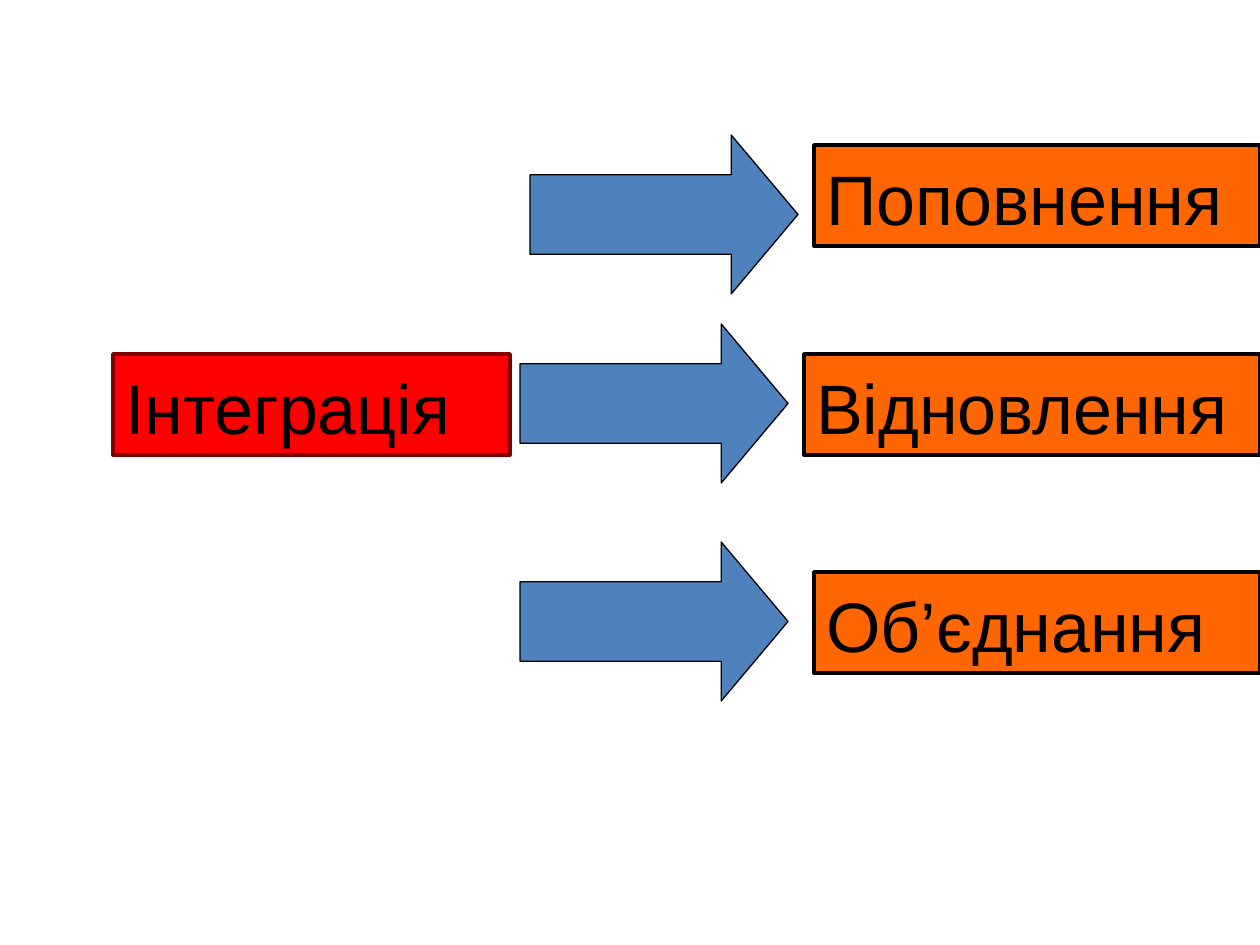
from pptx import Presentation
from pptx.dml.color import RGBColor
from pptx.enum.shapes import MSO_SHAPE as Shape
from pptx.enum.text import MSO_ANCHOR as Anchor, PP_ALIGN as Align
from pptx.util import Emu, Pt

# Content: the source term, then each outcome with (arrow left, arrow top, box left, box top)
SOURCE = ("Інтеграція", 113, 354, 397)
OUTCOMES = [
    ("Поповнення", 530, 135, 814, 145),
    ("Відновлення", 520, 324, 804, 354),
    ("Об’єднання", 520, 542, 814, 572),
]

THEME = {
    "source": "FF0000", "source_line": "800000",
    "outcome": "FF6600", "arrow": "4F81BD", "line": "000000",
    "text": "000000", "font": "Arial", "size": 40,
    "box_line": 2, "arrow_line": 0.75,
}
PAGE_WIDTH, PAGE_HEIGHT = 1260, 945
BOX_HEIGHT = 101
ARROW_WIDTH, ARROW_HEIGHT = 268, 159
ARROW_ADJUSTMENTS = (0.5, 0.42)


def px(length):
    return Emu(length * 914400 // 126)


def color(name):
    return RGBColor.from_string(THEME[name])


def add_figure(page, kind, bounds, fill, line, width):
    figure = page.shapes.add_shape(kind, *map(px, bounds))
    figure.shadow.inherit = False
    figure.fill.solid()
    figure.fill.fore_color.rgb = color(fill)
    figure.line.color.rgb = color(line)
    figure.line.width = Pt(THEME[width])
    return figure


def add_label(page, words, left, top, width, fill, line):
    box = add_figure(page, Shape.RECTANGLE, (left, top, width, BOX_HEIGHT),
                     fill, line, "box_line")
    frame = box.text_frame
    frame.word_wrap = True
    frame.vertical_anchor = Anchor.BOTTOM
    para = frame.paragraphs[0]
    para.alignment = Align.LEFT
    span = para.add_run()
    span.text = words
    for name, value in {"name": THEME["font"], "size": Pt(THEME["size"])}.items():
        setattr(span.font, name, value)
    span.font.color.rgb = color("text")


def add_arrow(page, left, top):
    arrow = add_figure(page, Shape.RIGHT_ARROW, (left, top, ARROW_WIDTH, ARROW_HEIGHT),
                       "arrow", "line", "arrow_line")
    for index, value in enumerate(ARROW_ADJUSTMENTS):
        arrow.adjustments[index] = value


def main():
    deck = Presentation()
    deck.slide_width, deck.slide_height = px(PAGE_WIDTH), px(PAGE_HEIGHT)
    page = deck.slides.add_slide(deck.slide_layouts[6])

    # Source term on the left
    add_label(page, *SOURCE, "source", "source_line")

    # Arrows to the outcomes, whose boxes reach the right edge of the page
    for words, arrow_left, arrow_top, left, top in OUTCOMES:
        add_arrow(page, arrow_left, arrow_top)
        add_label(page, words, left, top, PAGE_WIDTH - left, "outcome", "line")

    deck.save("out.pptx")


if __name__ == "__main__":
    main()
